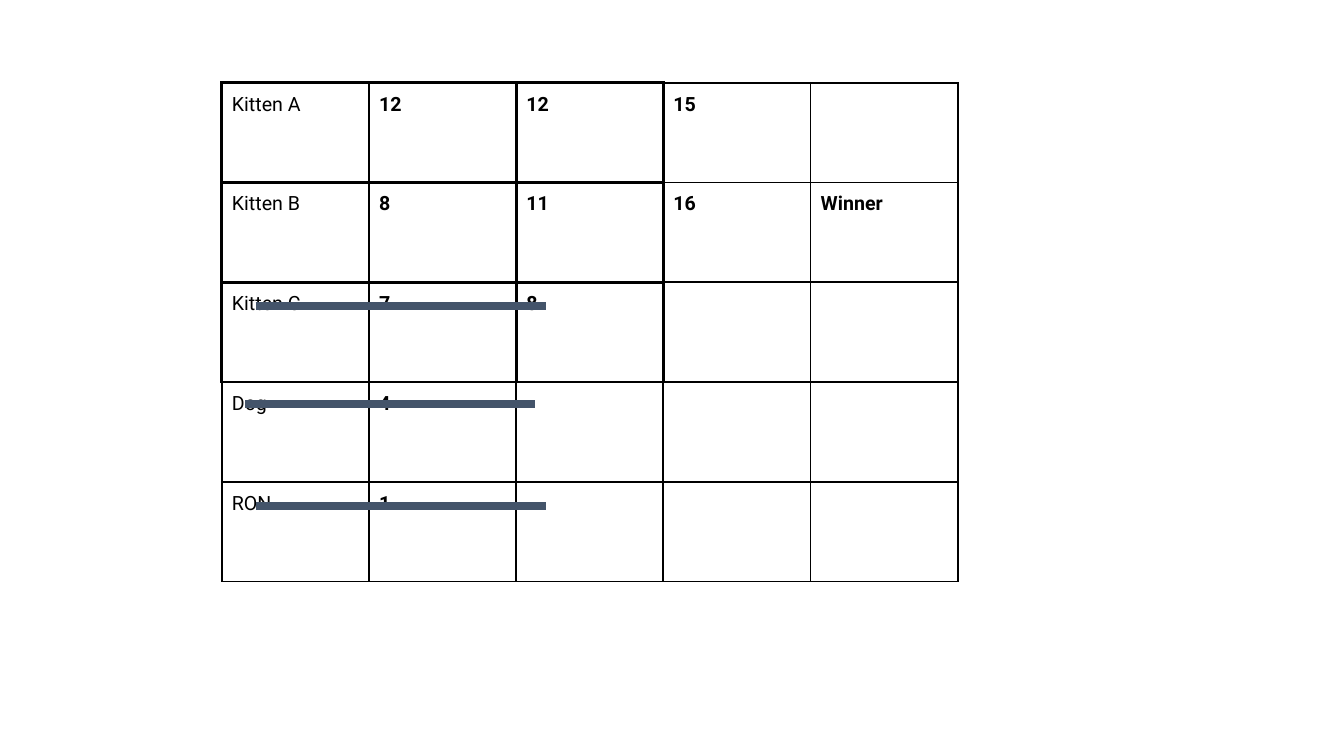
from lxml.etree import SubElement
from pptx import Presentation
from pptx.dml.color import RGBColor
from pptx.enum.shapes import MSO_CONNECTOR
from pptx.oxml.ns import qn
from pptx.util import Inches, Pt

COLORS = {"ink": "000000", "strike": "44546A"}
FONT = "Roboto"
LEFT, TOP = 2.2, 0.82
COLUMN, ROW = 1.46, 0.99
THIN, THICK = 1.5, 2.25
THICK_SPAN = 3  # the first rows and columns carry the heavier grid

VOTES = [
    ["Kitten A", "12", "12", "15", ""],
    ["Kitten B", "8", "11", "16", "Winner"],
    ["Kitten C", "7", "8", "", ""],
    ["Dog", "4", "", "", ""],
    ["RON", "1", "", "", ""],
]
# Start of each strike in columns and rows of the table
STRIKES = [(0.23, 4.24), (0.23, 2.24), (0.16, 3.22)]
STRIKE_COLUMNS = 1.97


def grid_x(columns):
    return Inches(LEFT + columns * COLUMN)


def grid_y(rows):
    return Inches(TOP + rows * ROW)


def in_thick_block(row, column):
    return 0 <= row < THICK_SPAN and 0 <= column < THICK_SPAN


def draw_borders(cell, row, column):
    """Border an edge heavily when the cell on either side is in the thick block."""
    neighbours = {
        "a:lnL": (row, column - 1),
        "a:lnR": (row, column + 1),
        "a:lnT": (row - 1, column),
        "a:lnB": (row + 1, column),
    }
    properties = cell._tc.get_or_add_tcPr()
    for edge, neighbour in neighbours.items():
        heavy = in_thick_block(row, column) or in_thick_block(*neighbour)
        border = SubElement(properties, qn(edge), w=str(Pt(THICK if heavy else THIN)))
        fill = SubElement(border, qn("a:solidFill"))
        SubElement(fill, qn("a:srgbClr"), val=COLORS["ink"])


def write_cell(cell, text, bold):
    cell.margin_left = cell.margin_right = Inches(0.1)
    cell.margin_top = cell.margin_bottom = Inches(0.1)
    paragraph = cell.text_frame.paragraphs[0]
    paragraph.font.size = Pt(14)
    if text:
        run = paragraph.add_run()
        run.text = text
        run.font.name = FONT
        run.font.size = Pt(14)
        run.font.bold = bold
        run.font.color.rgb = RGBColor.from_string(COLORS["ink"])


def add_vote_table(slide):
    rows, columns = len(VOTES), len(VOTES[0])
    table = slide.shapes.add_table(
        rows, columns, grid_x(0), grid_y(0),
        Inches(columns * COLUMN), Inches(rows * ROW)).table
    table.first_row = table.horz_banding = False
    for column in table.columns:
        column.width = Inches(COLUMN)
    for row in table.rows:
        row.height = Inches(ROW)
    for r, votes in enumerate(VOTES):
        for c, text in enumerate(votes):
            cell = table.cell(r, c)
            draw_borders(cell, r, c)
            cell.fill.background()
            write_cell(cell, text, bold=c > 0)


def add_strike(slide, column, row):
    strike = slide.shapes.add_connector(
        MSO_CONNECTOR.STRAIGHT, grid_x(column), grid_y(row),
        grid_x(column + STRIKE_COLUMNS), grid_y(row))
    strike.line.color.rgb = RGBColor.from_string(COLORS["strike"])
    strike.line.width = Pt(6)
    SubElement(strike._element.spPr, qn("a:effectLst"))


def main():
    deck = Presentation()
    deck.slide_width, deck.slide_height = Inches(13.33), Inches(7.5)
    slide = deck.slides.add_slide(deck.slide_layouts[6])
    add_vote_table(slide)
    for column, row in STRIKES:
        add_strike(slide, column, row)
    deck.save("out.pptx")


if __name__ == "__main__":
    main()
